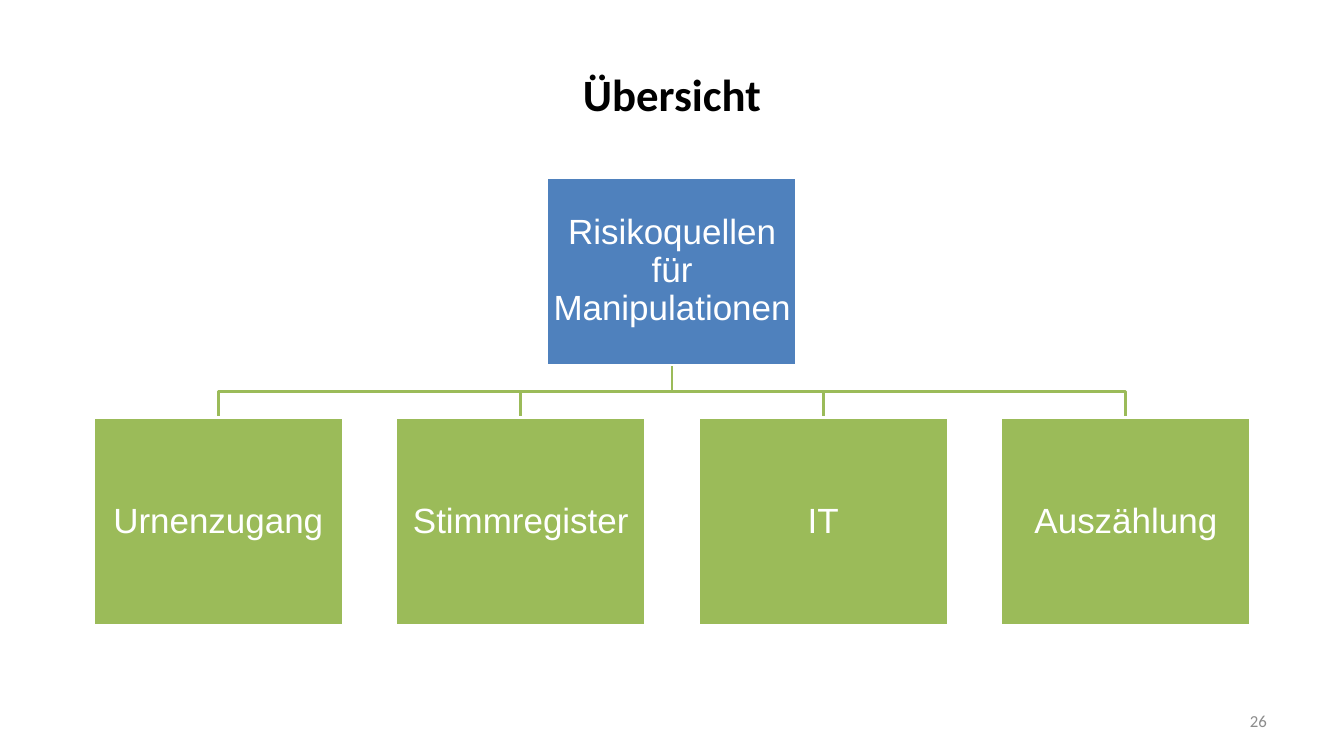
import pptx
import pptx.util
import pptx.dml.color
import pptx.enum.shapes
import pptx.enum.text

Pt = pptx.util.Pt
ALIGN = pptx.enum.text.PP_ALIGN

TITLE = "Übersicht"
ROOT = "Risikoquellen für Manipulationen"
SOURCES = ["Urnenzugang", "Stimmregister", "IT", "Auszählung"]
PAGE_NUMBER = "26"

BLUE, GREEN, WHITE, BLACK, GRAY = "4F81BD", "9BBB59", "FFFFFF", "000000", "8C8C8C"
SLIDE_WIDTH, SLIDE_HEIGHT = 960, 540
CENTER = SLIDE_WIDTH / 2
BOX_WIDTH, PITCH = 178.5, 216.1
ROOT_TOP, ROOT_HEIGHT = 126.8, 134
SOURCE_TOP, SOURCE_HEIGHT = 298.2, 148.8


def color(value):
    return pptx.dml.color.RGBColor.from_string(value)


def write(shape, text, font, size, text_color, align, bold=False):
    frame = shape.text_frame
    frame.word_wrap = True
    frame.vertical_anchor = pptx.enum.text.MSO_ANCHOR.MIDDLE
    paragraph = frame.paragraphs[0]
    paragraph.alignment = align
    run = paragraph.add_run()
    run.text = text
    run.font.name = font
    run.font.size = Pt(size)
    run.font.bold = bold
    run.font.color.rgb = color(text_color)
    return frame


def add_box(slide, text, center, top, height, fill):
    shape = slide.shapes.add_shape(
        pptx.enum.shapes.MSO_SHAPE.RECTANGLE,
        Pt(center - BOX_WIDTH / 2), Pt(top), Pt(BOX_WIDTH), Pt(height))
    shape.shadow.inherit = False
    shape.fill.solid()
    shape.fill.fore_color.rgb = color(fill)
    shape.line.color.rgb = color(WHITE)
    shape.line.width = Pt(2)
    frame = write(shape, text, "Arial", 25, WHITE, ALIGN.CENTER)
    frame.margin_left = frame.margin_right = Pt(1.25)
    frame.margin_top = frame.margin_bottom = Pt(1.25)
    frame.paragraphs[0].line_spacing = 0.9


def add_branch(slide, center):
    start = ROOT_TOP + ROOT_HEIGHT
    middle = (start + SOURCE_TOP) / 2
    builder = slide.shapes.build_freeform(Pt(CENTER), Pt(start))
    corners = [(CENTER, middle), (center, middle), (center, SOURCE_TOP)]
    builder.add_line_segments([(Pt(x), Pt(y)) for x, y in corners], close=False)
    branch = builder.convert_to_shape()
    branch.shadow.inherit = False
    branch.fill.background()
    branch.line.color.rgb = color(GREEN)
    branch.line.width = Pt(2)


def main():
    presentation = pptx.Presentation()
    presentation.slide_width = Pt(SLIDE_WIDTH)
    presentation.slide_height = Pt(SLIDE_HEIGHT)
    slide = presentation.slides.add_slide(presentation.slide_layouts[5])

    title = slide.shapes.title
    title.left, title.top, title.width, title.height = Pt(48), Pt(21.6), Pt(864), Pt(90)
    write(title, TITLE, "Calibri", 32, BLACK, ALIGN.CENTER, bold=True)

    first = CENTER - PITCH * (len(SOURCES) - 1) / 2
    centers = [first + PITCH * index for index in range(len(SOURCES))]
    for center in centers:
        add_branch(slide, center)
    add_box(slide, ROOT, CENTER, ROOT_TOP, ROOT_HEIGHT, BLUE)
    for source, center in zip(SOURCES, centers):
        add_box(slide, source, center, SOURCE_TOP, SOURCE_HEIGHT, GREEN)

    number = slide.shapes.add_textbox(Pt(688), Pt(500.5), Pt(224), Pt(28.75))
    write(number, PAGE_NUMBER, "Calibri", 12, GRAY, ALIGN.RIGHT)
    presentation.save("out.pptx")


if __name__ == "__main__":
    main()
